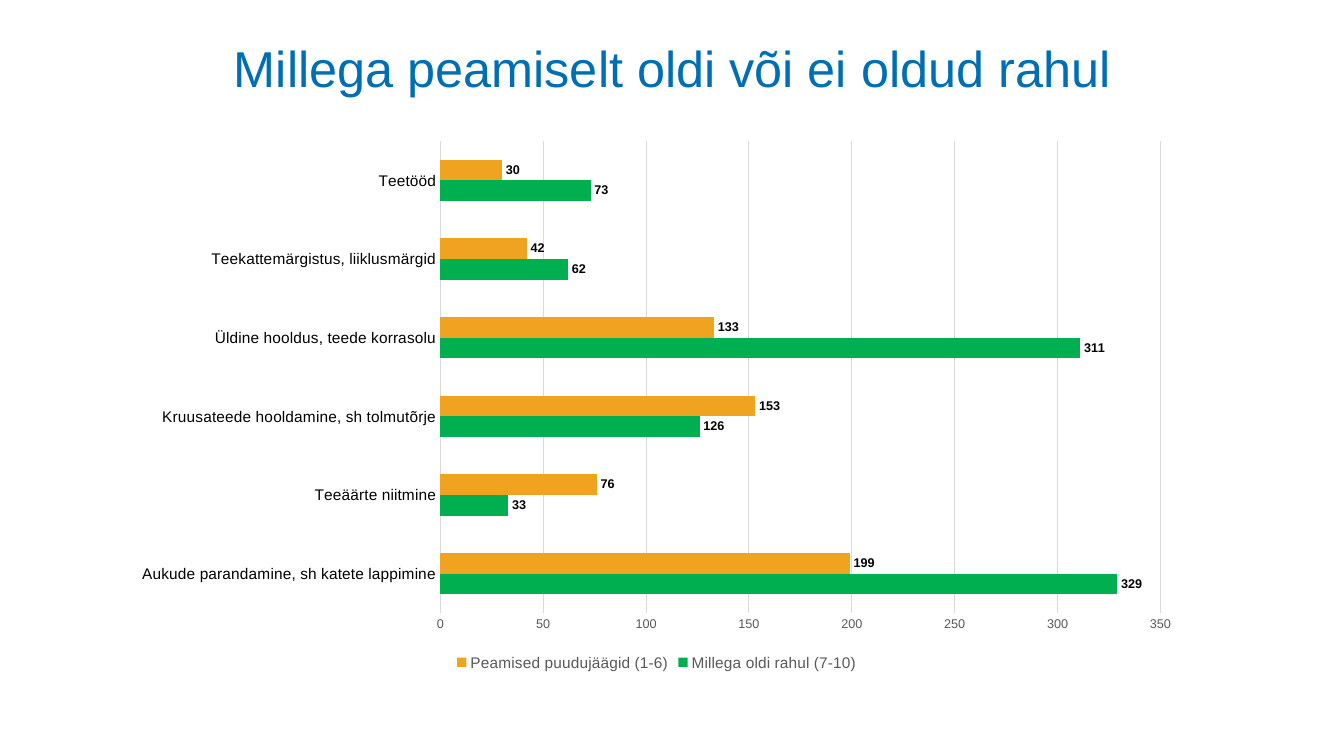
from dataclasses import dataclass

from lxml.etree import SubElement
from pptx import Presentation
from pptx.chart.chart import Chart
from pptx.chart.data import CategoryChartData
from pptx.chart.series import BarSeries
from pptx.dml.color import RGBColor
from pptx.enum.chart import XL_CHART_TYPE as ChartType
from pptx.enum.chart import XL_LABEL_POSITION as LabelPosition
from pptx.enum.chart import XL_LEGEND_POSITION as LegendPosition
from pptx.enum.chart import XL_TICK_MARK as TickMark
from pptx.enum.text import MSO_ANCHOR as Anchor
from pptx.enum.text import PP_ALIGN as Align
from pptx.oxml.ns import qn
from pptx.presentation import Presentation as Deck
from pptx.slide import Slide
from pptx.text.text import Font
from pptx.util import Inches, Pt


@dataclass(frozen=True)
class Theme:
    font: str = "Arial"
    title: str = "006EB5"
    ink: str = "000000"
    muted: str = "595959"
    rule: str = "D9D9D9"
    satisfied: str = "00B050"
    lacking: str = "F0A321"
    title_size: int = 36
    chart_size: int = 10
    category_size: int = 11
    value_size: int = 9
    rule_width: float = 0.75


@dataclass(frozen=True)
class Area:
    left: float
    top: float
    width: float
    height: float

    def on(self, deck: Deck) -> tuple[int, int, int, int]:
        return (
            int(self.left * deck.slide_width),
            int(self.top * deck.slide_height),
            int(self.width * deck.slide_width),
            int(self.height * deck.slide_height),
        )


@dataclass(frozen=True)
class Answers:
    name: str
    counts: tuple[int, ...]
    color: str


THEME = Theme()
TITLE_AREA = Area(0.0435, 0.032, 0.9137, 0.1133)
CHART_AREA = Area(0.09, 0.172, 0.7974, 0.7213)
PLOT_SHARE = Area(0.298, 0.02, 0.672, 0.866)
TOPICS = (
    "Aukude parandamine, sh katete lappimine",
    "Teeäärte niitmine",
    "Kruusateede hooldamine, sh tolmutõrje",
    "Üldine hooldus, teede korrasolu",
    "Teekattemärgistus, liiklusmärgid",
    "Teetööd",
)
ANSWERS = (
    Answers("Millega oldi rahul (7-10)", (329, 33, 126, 311, 62, 73), THEME.satisfied),
    Answers("Peamised puudujäägid (1-6)", (199, 76, 153, 133, 42, 30), THEME.lacking),
)


def style_font(font: Font, size: int, color: str, bold: bool = False) -> None:
    font.name = THEME.font
    font.size = Pt(size)
    font.bold = bold
    font.color.rgb = RGBColor.from_string(color)


def write_title(deck: Deck, page: Slide, text: str) -> None:
    box = page.shapes.title
    box.left, box.top, box.width, box.height = TITLE_AREA.on(deck)
    frame = box.text_frame
    frame.text = text
    frame.vertical_anchor = Anchor.MIDDLE
    para = frame.paragraphs[0]
    para.alignment = Align.CENTER
    for span in para.runs:
        style_font(span.font, THEME.title_size, THEME.title)


def style_axes(chart: Chart) -> None:
    topics, counts = chart.category_axis, chart.value_axis
    for axis in (topics, counts):
        axis.major_tick_mark = TickMark.NONE
        axis.minor_tick_mark = TickMark.NONE
    style_font(topics.tick_labels.font, THEME.category_size, THEME.ink)
    style_font(counts.tick_labels.font, THEME.value_size, THEME.muted)
    counts.minimum_scale, counts.maximum_scale, counts.major_unit = 0, 350, 50
    counts.has_major_gridlines = True
    counts.format.line.fill.background()
    for line in (topics.format.line, counts.major_gridlines.format.line):
        line.color.rgb = RGBColor.from_string(THEME.rule)
        line.width = Pt(THEME.rule_width)


def style_series(series: BarSeries, color: str) -> None:
    series.invert_if_negative = False
    series.format.fill.solid()
    series.format.fill.fore_color.rgb = RGBColor.from_string(color)
    labels = series.data_labels
    labels.show_value = True
    labels.position = LabelPosition.OUTSIDE_END
    style_font(labels.font, THEME.value_size, THEME.ink, bold=True)


def place_plot(chart: Chart, share: Area) -> None:
    plot_area = chart.plots[0]._element.getparent()
    for layout in plot_area.findall(qn("c:layout")):
        plot_area.remove(layout)
    layout = SubElement(plot_area, qn("c:layout"))
    plot_area.insert(0, layout)
    manual = SubElement(layout, qn("c:manualLayout"))
    settings = {
        "layoutTarget": "inner",
        "xMode": "edge",
        "yMode": "edge",
        "x": share.left,
        "y": share.top,
        "w": share.width,
        "h": share.height,
    }
    for name, value in settings.items():
        SubElement(manual, qn(f"c:{name}")).set("val", str(value))


def draw_chart(deck: Deck, page: Slide) -> None:
    data = CategoryChartData()
    data.categories = TOPICS
    for answers in ANSWERS:
        data.add_series(answers.name, answers.counts)
    frame = page.shapes.add_chart(ChartType.BAR_CLUSTERED, *CHART_AREA.on(deck), data)
    chart = frame.chart
    chart.has_title = False
    style_font(chart.font, THEME.chart_size, THEME.ink)
    plot = chart.plots[0]
    plot.gap_width = 182
    plot.overlap = 0
    plot.vary_by_categories = False
    for series, answers in zip(plot.series, ANSWERS):
        style_series(series, answers.color)
    style_axes(chart)
    chart.has_legend = True
    chart.legend.position = LegendPosition.BOTTOM
    chart.legend.include_in_layout = False
    style_font(chart.legend.font, THEME.category_size, THEME.muted)
    place_plot(chart, PLOT_SHARE)


def main() -> None:
    deck = Presentation()
    deck.slide_width, deck.slide_height = Inches(13.33), Inches(7.5)
    page = deck.slides.add_slide(deck.slide_layouts.get_by_name("Title Only"))
    write_title(deck, page, "Millega peamiselt oldi või ei oldud rahul")
    draw_chart(deck, page)
    deck.save("out.pptx")


if __name__ == "__main__":
    main()
